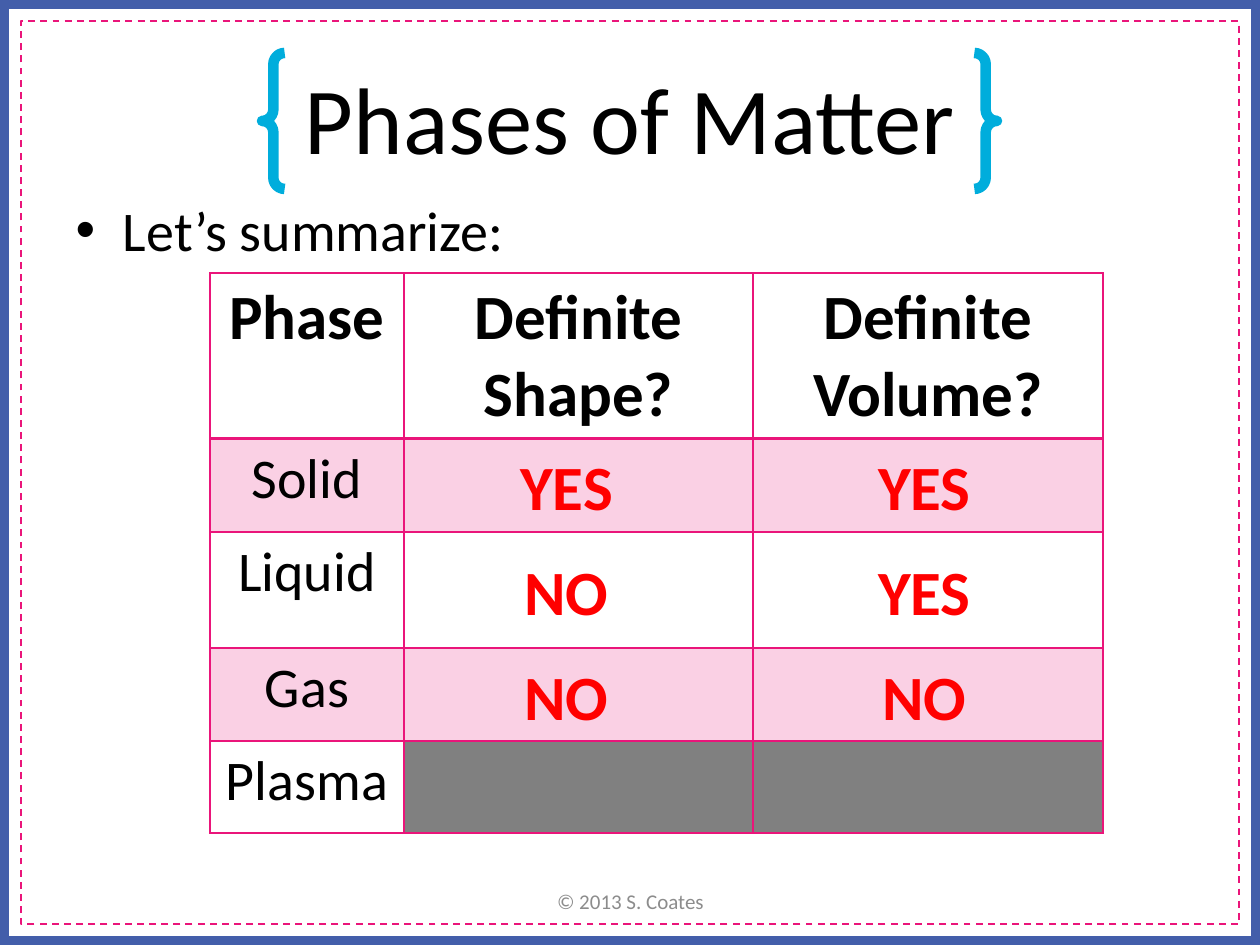
from lxml.etree import SubElement
from pptx import Presentation
from pptx.dml.color import RGBColor
from pptx.enum.dml import MSO_LINE_DASH_STYLE as DASH
from pptx.enum.shapes import MSO_SHAPE as SHAPE
from pptx.enum.text import MSO_ANCHOR as ANCHOR, MSO_AUTO_SIZE as AUTO_SIZE, PP_ALIGN as ALIGN
from pptx.oxml.ns import qn
from pptx.util import Emu, Pt

BLUE = RGBColor(0x43, 0x5E, 0xAA)
PINK = RGBColor(0xEA, 0x15, 0x7A)
CYAN = RGBColor(0x00, 0xAD, 0xDC)
BLACK = RGBColor(0x00, 0x00, 0x00)
GRAY = RGBColor(0x80, 0x80, 0x80)
FOOTER_GRAY = RGBColor(0x8C, 0x8C, 0x8C)
RED = RGBColor(0xFF, 0x00, 0x00)

PX_PER_INCH = 126
COLUMN_WIDTHS = [194, 349, 350]
ROW_HEIGHTS = [166, 93, 116, 93, 92]
HEADERS = ["Phase", "Definite Shape?", "Definite Volume?"]
PHASES = ["Solid", "Liquid", "Gas", "Plasma"]
ANSWERS = [["YES", "YES"], ["NO", "YES"], ["NO", "NO"]]


def px(length):
    return Emu(round(length * 914400 / PX_PER_INCH))


def place(shape, box):
    shape.left, shape.top, shape.width, shape.height = map(px, box)


def write(text_frame, text, size, color=BLACK, bold=False, align=ALIGN.CENTER):
    paragraph = text_frame.paragraphs[0]
    paragraph.alignment = align
    paragraph.space_before = Pt(0)
    run = paragraph.add_run()
    run.text = text
    font = run.font
    font.name, font.size, font.bold = "Calibri", Pt(size), bold
    font.color.rgb = color


def add_text(slide, box, text, size, color, bold=False, anchor=ANCHOR.TOP):
    frame = slide.shapes.add_textbox(*map(px, box)).text_frame
    frame.word_wrap = True
    frame.vertical_anchor = anchor
    write(frame, text, size, color, bold)
    return frame


def add_outline(slide, kind, box, color, width):
    shape = slide.shapes.add_shape(kind, *map(px, box))
    shape.shadow.inherit = False
    shape.fill.background()
    shape.line.color.rgb = color
    shape.line.width = Pt(width)
    return shape


def add_frame(slide, box):
    """Draw the solid slide edge and the dashed border inside it."""
    left, top, width, height = box
    inset = 21
    add_outline(slide, SHAPE.RECTANGLE, box, BLUE, 10)
    inner = (left + inset, top + inset, width - 2 * inset, height - 2 * inset)
    border = add_outline(slide, SHAPE.RECTANGLE, inner, PINK, 1)
    border.line.dash_style = DASH.DASH


def add_heading(slide, box):
    left, top, width, height = box
    add_outline(slide, SHAPE.DOUBLE_BRACE, (left + 199, top + 15, 735, 136), CYAN, 6)
    title = slide.shapes.title
    place(title, box)
    title.text_frame.vertical_anchor = ANCHOR.MIDDLE
    write(title.text_frame, "Phases of Matter", 54)


def add_body(slide, box):
    body = slide.placeholders[1]
    place(body, box)
    write(body.text_frame, "Let’s summarize:", 32, align=ALIGN.LEFT)


def set_borders(cell, widths):
    """Give the cell pink borders; widths maps each side (L, R, T, B) to points."""
    properties = cell._tc.get_or_add_tcPr()
    for side, width in widths.items():
        line = SubElement(properties, qn(f"a:ln{side}"), w=str(Pt(width)))
        fill = SubElement(line, qn("a:solidFill"))
        SubElement(fill, qn("a:srgbClr"), val=str(PINK))


def fill_cell(cell, row, column):
    if row == len(PHASES) and column > 0:
        cell.fill.solid()
        cell.fill.fore_color.rgb = GRAY
    elif row % 2 == 1:
        cell.fill.solid()
        cell.fill.fore_color.rgb = PINK
        color = cell._tc.tcPr.find(f"{qn('a:solidFill')}/{qn('a:srgbClr')}")
        SubElement(color, qn("a:alpha"), val="20000")
    else:
        cell.fill.background()


def add_phase_table(slide, left, top):
    box = (left, top, sum(COLUMN_WIDTHS), sum(ROW_HEIGHTS))
    table = slide.shapes.add_table(
        len(ROW_HEIGHTS), len(COLUMN_WIDTHS), *map(px, box)).table
    for column, width in zip(table.columns, COLUMN_WIDTHS):
        column.width = px(width)
    for row, height in zip(table.rows, ROW_HEIGHTS):
        row.height = px(height)

    for row in range(len(ROW_HEIGHTS)):
        for column in range(len(COLUMN_WIDTHS)):
            cell = table.cell(row, column)
            top_width = 2 if row == 1 else 1
            bottom_width = 2 if row == 0 else 1
            set_borders(cell, {"L": 1, "R": 1, "T": top_width, "B": bottom_width})
            fill_cell(cell, row, column)
            if row == 0:
                write(cell.text_frame, HEADERS[column], 36, bold=True)
            elif column == 0:
                write(cell.text_frame, PHASES[row - 1], 32)


def add_answers(slide, left, top):
    for row, answers in enumerate(ANSWERS):
        for column, answer in enumerate(answers):
            box = (left + 358 * column, top + 105 * row, 231, 89)
            frame = add_text(slide, box, answer, 36, RED, bold=True)
            frame.auto_size = AUTO_SIZE.SHAPE_TO_FIT_TEXT


def main():
    presentation = Presentation()
    presentation.slide_width, presentation.slide_height = px(1260), px(945)
    slide = presentation.slides.add_slide(presentation.slide_layouts[1])
    add_frame(slide, (0, 0, 1260, 945))
    add_heading(slide, (63, 38, 1134, 157))
    add_body(slide, (63, 189, 1134, 136))
    add_text(slide, (431, 876, 399, 50), "© 2013 S. Coates", 12, FOOTER_GRAY,
             anchor=ANCHOR.MIDDLE)
    add_phase_table(slide, 210, 273)
    add_answers(slide, 451, 441)
    presentation.save("out.pptx")


if __name__ == "__main__":
    main()
